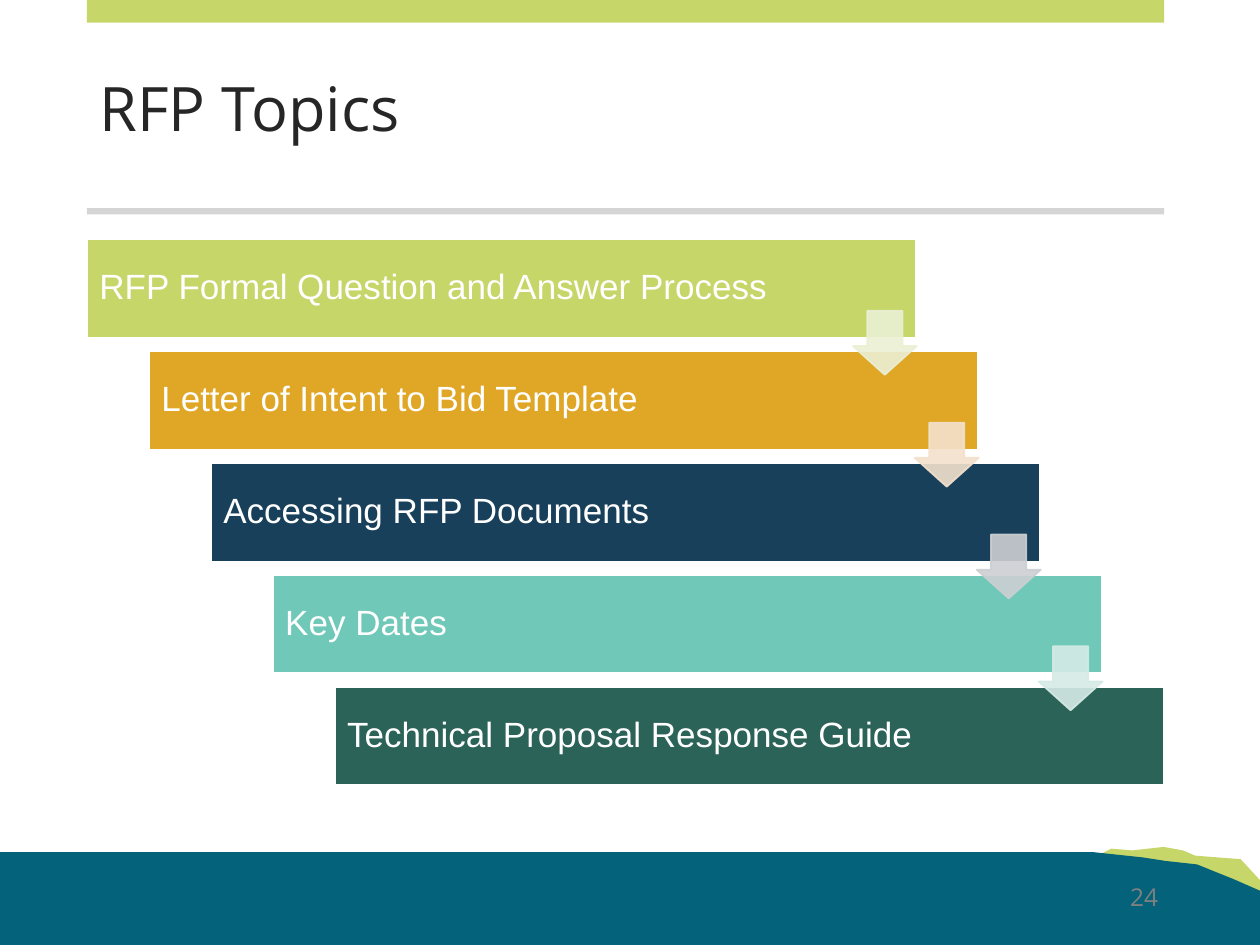
import pptx
import pptx.dml.color
import pptx.enum.shapes
import pptx.enum.text
import pptx.oxml
import pptx.oxml.ns
import pptx.util

Pt = pptx.util.Pt
SHAPES = pptx.enum.shapes.MSO_SHAPE
ALIGN = pptx.enum.text.PP_ALIGN
ANCHOR = pptx.enum.text.MSO_ANCHOR

TOPICS = [
    ("RFP Formal Question and Answer Process", "C6D668"),
    ("Letter of Intent to Bid Template", "E0A626"),
    ("Accessing RFP Documents", "18405B"),
    ("Key Dates", "70C8B8"),
    ("Technical Proposal Response Guide", "2C6358"),
]
ARROW_COLOURS = ["EAF0D4", "F3E1CD", "CCCFD2", "D5EBE6"]
GREEN_HILL = [(635, 485.3), (620.6, 492.5), (720.7, 511.9), (720, 503.3), (709.2, 491),
              (683.3, 488.9), (675.5, 486.1), (664.6, 483.8), (647.3, 486)]
TEAL_HILL = [(0, 487.4), (625, 487.4), (653, 489.6), (665.8, 491.5), (684, 493.9),
             (693.5, 497.6), (704.2, 501.8), (720, 509), (720, 540), (0, 540)]


def colour(value):
    return pptx.dml.color.RGBColor.from_string(value)


class TopicPage:
    """Holds the fonts and the current slide, and draws its elements."""

    heading_font = "Open Sans"
    body_font = "Arial"

    def __init__(self, deck):
        self.page = deck.slides.add_slide(deck.slide_layouts[6])

    def paint(self, shape, fill, line=None, opacity=None):
        shape.shadow.inherit = False
        shape.fill.solid()
        shape.fill.fore_color.rgb = colour(fill)
        if line:
            shape.line.color.rgb = colour(line)
            shape.line.width = Pt(1)
        else:
            shape.line.fill.background()
        if opacity:
            for tint in shape.element.spPr.iter(pptx.oxml.ns.qn("a:srgbClr")):
                alpha = pptx.oxml.parse_xml(
                    f'<a:alpha {pptx.oxml.ns.nsdecls("a")} val="{opacity * 1000}"/>')
                tint.append(alpha)

    def hill(self, points, fill):
        builder = self.page.shapes.build_freeform(*points[0], scale=Pt(1))
        builder.add_line_segments(points[1:], close=True)
        self.paint(builder.convert_to_shape(), fill)

    def block(self, left, top, width, height, fill, line=None):
        shape = self.page.shapes.add_shape(
            SHAPES.RECTANGLE, Pt(left), Pt(top), Pt(width), Pt(height))
        self.paint(shape, fill, line)
        return shape

    def add_text(self, shape, text, font, size, ink, align=ALIGN.LEFT, anchor=ANCHOR.MIDDLE, spacing=0.9):
        frame = shape.text_frame
        frame.word_wrap = True
        frame.vertical_anchor = anchor
        para = frame.paragraphs[0]
        para.alignment = align
        para.line_spacing = spacing
        span = para.add_run()
        span.text = text
        span.font.name = font
        span.font.size = Pt(size)
        span.font.color.rgb = colour(ink)

    def label(self, left, top, width, height, text, size, ink, **layout):
        box = self.page.shapes.add_textbox(Pt(left), Pt(top), Pt(width), Pt(height))
        self.add_text(box, text, self.heading_font, size, ink, **layout)

    def topic(self, left, top, text, fill):
        bar = self.block(left, top, 473.8, 56.2, fill, "FFFFFF")
        self.add_text(bar, text, self.body_font, 20, "FFFFFF")

    def arrow(self, left, top, fill):
        shape = self.page.shapes.add_shape(
            SHAPES.DOWN_ARROW, Pt(left), Pt(top), Pt(36.6), Pt(36.6))
        shape.adjustments[0] = 0.55
        shape.adjustments[1] = 0.45
        self.paint(shape, fill, fill, opacity=90)


def main():
    deck = pptx.Presentation()
    deck.slide_width, deck.slide_height = Pt(720), Pt(540)
    slide = TopicPage(deck)
    slide.hill(GREEN_HILL, "C6D668")
    slide.hill(TEAL_HILL, "04627A")

    margin, content_width = 49.7, 615.6
    slide.label(margin, 26.6, content_width, 74.2, "RFP Topics", 35, "262626")
    slide.block(margin, 0, content_width, 13, "C6D668")
    slide.block(margin, 119, content_width, 3.6, "D5D5D5")
    slide.label(514.8, 500.4, 154.1, 25.2, "24", 14, "808080",
                align=ALIGN.RIGHT, anchor=ANCHOR.TOP, spacing=1)

    step_across, step_down = 35.4, 63.9
    for index, (text, fill) in enumerate(TOPICS):
        slide.topic(margin + index * step_across, 136.8 + index * step_down, text, fill)
    for index, fill in enumerate(ARROW_COLOURS):
        slide.arrow(487.3 + index * step_across, 177.6 + index * step_down, fill)

    deck.save("out.pptx")


if __name__ == "__main__":
    main()
